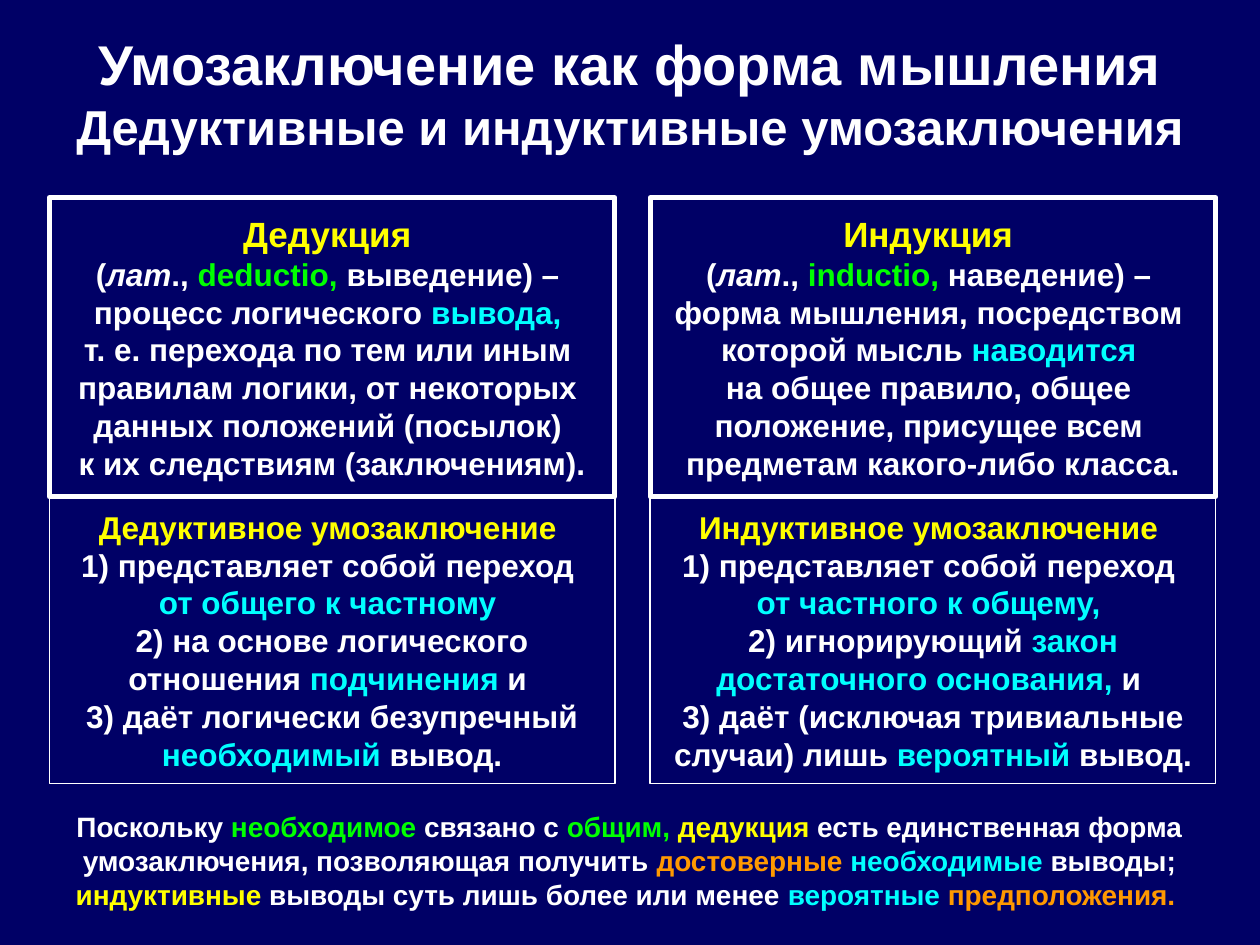
from pptx import Presentation
from pptx.dml.color import RGBColor
from pptx.enum.shapes import MSO_SHAPE
from pptx.enum.text import MSO_ANCHOR, PP_ALIGN
from pptx.util import Pt

PX = 9144  # EMU in one px, 100 px to the inch

NAVY = RGBColor(0x00, 0x00, 0x66)
WHITE = RGBColor(0xFF, 0xFF, 0xFF)
YELLOW = RGBColor(0xFF, 0xFF, 0x00)
GREEN = RGBColor(0x00, 0xFF, 0x00)
CYAN = RGBColor(0x00, 0xFF, 0xFF)
ORANGE = RGBColor(0xFF, 0x99, 0x00)

BASE = {"name": "Arial", "bold": True, "size": Pt(18)}
HEAD = {"size": Pt(20)}
SLANT = {"italic": True}

# Each paragraph is a list of (text, colour[, extra format])
TITLE = [[
    ("Умозаключение как форма мышления ", WHITE, {"size": Pt(32)}),
    ("Дедуктивные и индуктивные умозаключения", WHITE, {"size": Pt(28)}),
]]

DEDUCT = [[
    ("Дедукция \n", YELLOW, HEAD),
    ("(", WHITE), ("лат", WHITE, SLANT), ("., ", WHITE),
    ("deductio, ", GREEN),
    ("выведение) – \nпроцесс логического ", WHITE),
    ("вывода, \n", CYAN),
    ("т. е. перехода по тем или иным \nправилам логики, от некоторых \n"
     "данных положений (посылок) \nк их следствиям (заключениям).", WHITE),
]]

DEDUCT_USE = [
    [
        ("Дедуктивное умозаключение \n", YELLOW),
        ("1) представляет собой переход \n", WHITE),
        ("от общего к частному ", CYAN),
    ],
    [
        ("2) на основе логического отношения ", WHITE),
        ("подчинения", CYAN),
        (" и \n3) даёт логически безупречный ", WHITE),
        ("необходимый", CYAN),
        (" вывод.", WHITE),
    ],
]

INDUCT = [[
    ("Индукция \n", YELLOW, HEAD),
    ("(", WHITE), ("лат", WHITE, SLANT), ("., ", WHITE),
    ("inductio, ", GREEN),
    ("наведение) – \nформа мышления, посредством \nкоторой мысль ", WHITE),
    ("наводится \n", CYAN),
    ("на общее правило, общее \nположение, присущее всем \n"
     "предметам какого-либо класса.", WHITE),
]]

INDUCT_USE = [[
    ("Индуктивное умозаключение \n", YELLOW),
    ("1) представляет собой переход \n", WHITE),
    ("от частного к общему, \n", CYAN),
    ("2) игнорирующий ", WHITE),
    ("закон достаточного основания, ", CYAN),
    ("и \n3) даёт (исключая тривиальные случаи) лишь ", WHITE),
    ("вероятный", CYAN),
    (" вывод.", WHITE),
]]

SMALL = {"size": Pt(16)}
NOTE = [[(text, color, SMALL) for text, color in (
    ("Поскольку ", WHITE),
    ("необходимое ", GREEN),
    ("связано с ", WHITE),
    ("общим, ", GREEN),
    ("дедукция", YELLOW),
    (" есть единственная форма умозаключения, позволяющая получить ", WHITE),
    ("достоверные ", ORANGE),
    ("необходимые", CYAN),
    (" выводы; ", WHITE),
    ("индуктивные", YELLOW),
    (" выводы суть лишь более или менее ", WHITE),
    ("вероятные ", CYAN),
    ("предположения. ", ORANGE),
)]]


def scale(*box):
    return [v * PX for v in box]


def add_run(par, text, color, extra=None):
    """Add one styled run, with a line break at each newline."""
    for i, part in enumerate(text.split("\n")):
        if i:
            par.add_line_break()
        if part:
            run = par.add_run()
            run.text = part
            for key, val in {**BASE, **(extra or {})}.items():
                setattr(run.font, key, val)
            run.font.color.rgb = color


def fill_text(frame, pars, anchor, side=10):
    form = {"word_wrap": True, "vertical_anchor": anchor,
            "margin_left": side * PX, "margin_right": side * PX,
            "margin_top": 5 * PX, "margin_bottom": 5 * PX}
    for key, val in form.items():
        setattr(frame, key, val)
    for i, runs in enumerate(pars):
        par = frame.add_paragraph() if i else frame.paragraphs[0]
        par.alignment = PP_ALIGN.CENTER
        for run in runs:
            add_run(par, *run)


def add_label(slide, box, pars, anchor):
    label = slide.shapes.add_textbox(*scale(*box))
    fill_text(label.text_frame, pars, anchor)


def add_frame(slide, box, pars, line, side):
    rect = slide.shapes.add_shape(MSO_SHAPE.RECTANGLE, *scale(*box))
    rect.shadow.inherit = False
    rect.fill.background()
    rect.line.color.rgb = WHITE
    rect.line.width = Pt(line)
    fill_text(rect.text_frame, pars, MSO_ANCHOR.MIDDLE, side)


def add_column(slide, box, term, usage, side):
    """Thick frame with the term above a thin frame with its usage."""
    left, top, width, height = box
    split = 237
    add_frame(slide, (left, top, width, split), term, 3, 10)
    add_frame(slide, (left, top + split, width, height - split),
              usage, 0.75, side)


def main():
    deck = Presentation()
    deck.slide_width, deck.slide_height = scale(1000, 750)
    slide = deck.slides.add_slide(deck.slide_layouts[6])
    slide.background.fill.solid()
    slide.background.fill.fore_color.rgb = NAVY

    # Title
    add_label(slide, (47, 30, 906, 87), TITLE, MSO_ANCHOR.MIDDLE)

    # Two columns
    columns = ((DEDUCT, DEDUCT_USE, 8), (INDUCT, INDUCT_USE, 4))
    for i, column in enumerate(columns):
        add_column(slide, (39 + i * 477, 157, 449, 465), *column)

    # Conclusion
    add_label(slide, (39, 638, 921, 87), NOTE, MSO_ANCHOR.TOP)

    deck.save("out.pptx")


if __name__ == "__main__":
    main()
